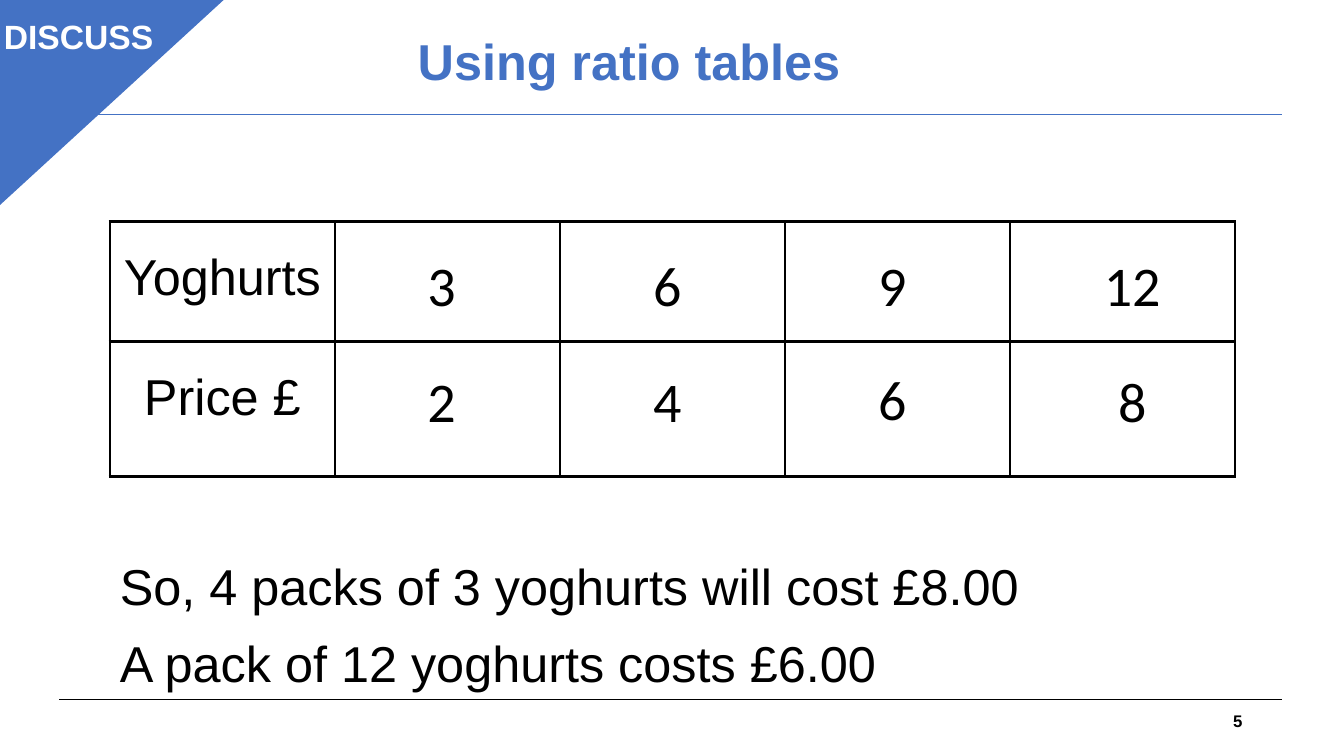
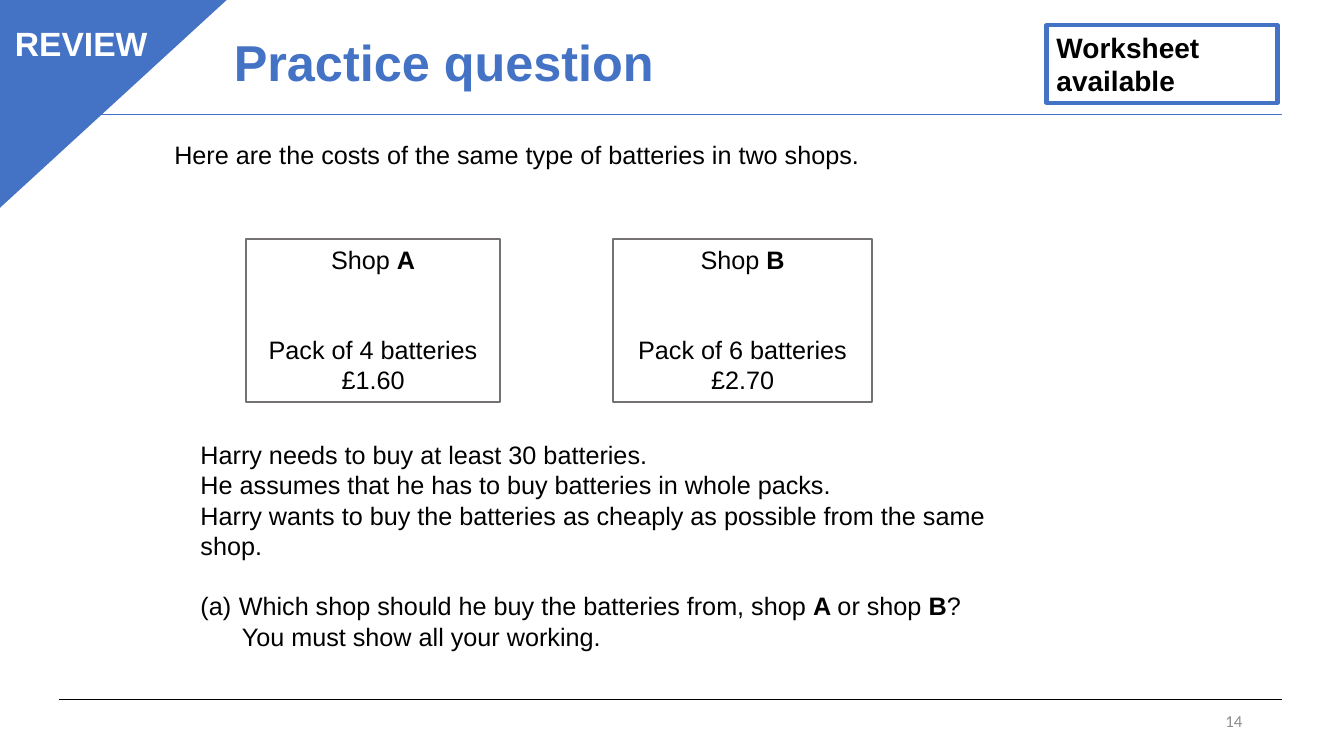
from lxml.etree import SubElement
from pptx import Presentation
from pptx.dml.color import RGBColor
from pptx.enum.shapes import MSO_CONNECTOR, MSO_SHAPE
from pptx.enum.text import MSO_ANCHOR, PP_ALIGN
from pptx.oxml.ns import qn
from pptx.util import Inches, Pt

BLUE = RGBColor(0x44, 0x72, 0xC4)
BLACK = RGBColor(0, 0, 0)
WHITE = RGBColor(0xFF, 0xFF, 0xFF)
GREY = RGBColor(0x8C, 0x8C, 0x8C)
BOX_GREY = RGBColor(0x76, 0x71, 0x71)
LEFT, CENTER, RIGHT = PP_ALIGN.LEFT, PP_ALIGN.CENTER, PP_ALIGN.RIGHT
TOP, MIDDLE = MSO_ANCHOR.TOP, MSO_ANCHOR.MIDDLE

# Words between asterisks are bold.
ROW_LABELS = ["Yoghurts", "Price £"]
ROW_HEIGHTS = [1.19, 1.34]
TABLE_LEFT, TABLE_TOP, TABLE_WIDTH = 1.09, 2.2, 11.16
COLUMNS = 5
# Each number: text, left, top and width of its label over the table.
NUMBER_LEFTS = [4.14, 6.38, 8.61]
NUMBERS = [
    *((n, x, 2.44, 0.58) for n, x in zip("369", NUMBER_LEFTS)),
    ("12", 10.85, 2.44, 0.79),
    *((n, x, y, 0.58) for n, x, y in zip("246", NUMBER_LEFTS, (3.59, 3.59, 3.57))),
    ("8", 10.99, 3.59, 0.79),
]
CONCLUSIONS = ["So, 4 packs of 3 yoghurts will cost £8.00",
               "A pack of 12 yoghurts costs £6.00"]

INTRO = "Here are the costs of the same type of batteries in two shops."
SHOPS = [
    ((2.44, 2.37, 2.52, 1.62), ["Shop *A*", "Pack of 4 batteries", "£1.60"]),
    ((6.08, 2.37, 2.57, 1.62), ["Shop *B*", "Pack of 6 batteries", "£2.70"]),
]
QUESTION = [
    "Harry needs to buy at least 30 batteries.",
    "He assumes that he has to buy batteries in whole packs.",
    "Harry wants to buy the batteries as cheaply as possible from the same shop.",
    "Which shop should he buy the batteries from, shop *A *or shop *B*?",
    "You must show all your working.",
]


def write(tf, lines, size=18, font="Arial", color=BLACK, bold=False,
          align=LEFT, anchor=TOP, spacing=None, gaps=None):
    """Fill a text frame; gaps maps a paragraph index to its space before."""
    tf.word_wrap = True
    tf.vertical_anchor = anchor
    for i, line in enumerate(lines):
        p = tf.paragraphs[0] if i == 0 else tf.add_paragraph()
        p.alignment = align
        if spacing:
            p.line_spacing = spacing
        if gaps and i in gaps:
            p.space_before = Pt(gaps[i])
        for j, part in enumerate(line.split("*")):
            if part:
                r = p.add_run()
                r.text = part
                r.font.size, r.font.name = Pt(size), font
                r.font.bold = bold or j % 2 == 1
                r.font.color.rgb = color
    return tf


def add_text(s, box, lines, **fmt):
    return write(s.shapes.add_textbox(*map(Inches, box)).text_frame, lines, **fmt)


def add_box(s, box, lines, line_color, line_width, **fmt):
    sp = s.shapes.add_shape(MSO_SHAPE.RECTANGLE, *map(Inches, box))
    sp.shadow.inherit = False
    sp.fill.background()
    sp.line.color.rgb, sp.line.width = line_color, Pt(line_width)
    write(sp.text_frame, lines, **fmt)


def add_rule(s, y, color):
    line = s.shapes.add_connector(MSO_CONNECTOR.STRAIGHT, Inches(0.59), Inches(y),
                                  Inches(12.72), Inches(y))
    line.line.color.rgb, line.line.width = color, Pt(0.75)
    SubElement(line._element.spPr, qn("a:effectLst"))


def add_corner(s, x, label, label_box, align):
    sp = s.shapes.add_shape(MSO_SHAPE.RIGHT_TRIANGLE, Inches(x), Inches(-0.02),
                            Inches(2.29), Inches(2.1))
    sp._element.spPr.find(qn("a:xfrm")).set("flipV", "1")
    sp.shadow.inherit = False
    sp.fill.solid()
    sp.fill.fore_color.rgb = BLUE
    sp.line.color.rgb, sp.line.width = BLUE, Pt(1)
    add_text(s, label_box, [label], size=24, color=WHITE, bold=True, align=align)


def add_base(prs, title, title_box, title_align, number, corner, **number_fmt):
    """Add a slide with the rules, title, page number and corner flag."""
    s = prs.slides.add_slide(prs.slide_layouts[6])
    add_rule(s, 6.94, BLACK)
    add_rule(s, 1.14, BLUE)
    add_text(s, (9.42, 6.95, 3, 0.4), [number], size=12, align=RIGHT,
             anchor=MIDDLE, **number_fmt)
    add_text(s, title_box, [title], size=36, color=BLUE, bold=True,
             align=title_align, anchor=MIDDLE, spacing=0.9)
    add_corner(s, *corner)
    return s


def style_cell(cell):
    cell.margin_left = cell.margin_right = Inches(0.07)
    cell.margin_top = cell.margin_bottom = 0
    tc_pr = cell._tc.get_or_add_tcPr()
    for side in ("lnL", "lnR", "lnT", "lnB"):
        ln = SubElement(tc_pr, qn(f"a:{side}"), w=str(Pt(2.25)))
        SubElement(SubElement(ln, qn("a:solidFill")), qn("a:srgbClr"), val=str(BLACK))
    cell.fill.background()


def add_ratio_table(s):
    table = s.shapes.add_table(
        len(ROW_LABELS), COLUMNS, Inches(TABLE_LEFT), Inches(TABLE_TOP),
        Inches(TABLE_WIDTH), Inches(sum(ROW_HEIGHTS))).table
    table.first_row = table.horz_banding = False
    for column in table.columns:
        column.width = Inches(TABLE_WIDTH / COLUMNS)
    for row, height in zip(table.rows, ROW_HEIGHTS):
        row.height = Inches(height)
    for cell in table.iter_cells():
        style_cell(cell)
    for i, label in enumerate(ROW_LABELS):
        write(table.cell(i, 0).text_frame, [label], size=36, align=CENTER, spacing=1.5)
    for number, x, y, width in NUMBERS:
        add_text(s, (x, y, width, 0.77), [number], size=40, font="Calibri")


def indent_question(tf):
    """Number the question as (a) and align its last line with it."""
    question, instruction = tf.paragraphs[-2:]
    p_pr = question._p.get_or_add_pPr()
    p_pr.set("marL", str(Inches(0.38)))
    p_pr.set("indent", str(Inches(-0.38)))
    SubElement(p_pr, qn("a:buFont"), typeface="Arial")
    SubElement(p_pr, qn("a:buAutoNum"), type="alphaLcParenBoth")
    instruction._p.get_or_add_pPr().set("marL", str(Inches(0.41)))


def build_ratio_slide(prs):
    s = add_base(prs, "Using ratio tables", (1.24, 0.08, 10, 1.11), CENTER, "5",
                 (-0.06, "DISCUSS", (-0.06, 0.11, 1.86, 0.5), LEFT), bold=True)
    add_ratio_table(s)
    add_text(s, (1.09, 5.46, 11.16, 1.48), CONCLUSIONS, size=36, gaps={1: 12})


def build_practice_slide(prs):
    s = add_base(prs, "Practice question", (2.22, 0.09, 8.69, 1.11), LEFT, "14",
                 (-0.03, "REVIEW", (-0.02, 0.18, 1.65, 0.5), CENTER),
                 font="Calibri", color=GREY)
    add_box(s, (10.38, 0.25, 2.29, 0.77), ["Worksheet", "available"], BLUE, 3,
            size=20, bold=True)
    add_text(s, (1.63, 1.33, 7.79, 0.4), [INTRO])
    for box, lines in SHOPS:
        add_box(s, box, lines, BOX_GREY, 1.5, align=CENTER, gaps={1: 43})
    indent_question(add_text(s, (1.89, 4.31, 8.2, 2.22), QUESTION, gaps={3: 21.6}))


def main():
    prs = Presentation()
    prs.slide_width, prs.slide_height = Inches(13.33), Inches(7.5)
    build_ratio_slide(prs)
    build_practice_slide(prs)
    prs.save("out.pptx")


if __name__ == "__main__":
    main()
